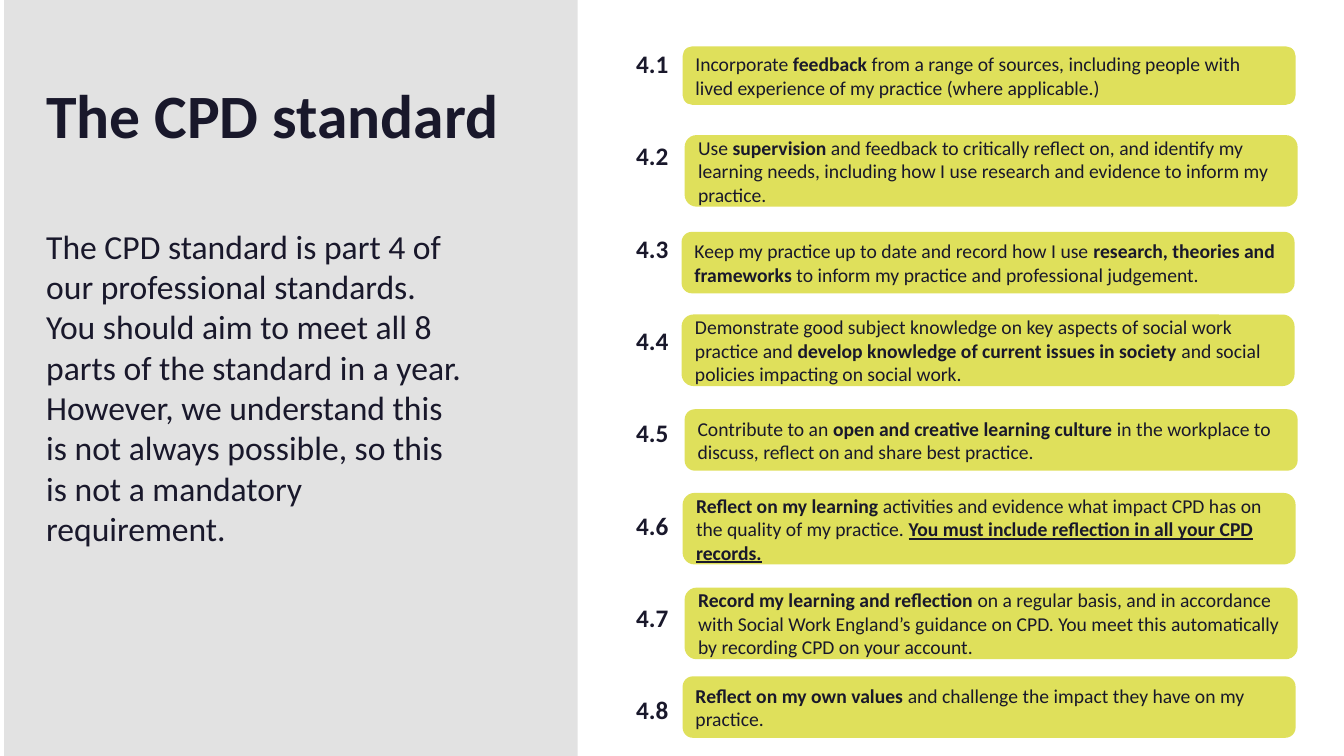
from dataclasses import dataclass

from pptx import Presentation
from pptx.dml.color import RGBColor as RGB
from pptx.enum.shapes import MSO_SHAPE as SHAPE
from pptx.enum.text import MSO_ANCHOR as ANCHOR, MSO_AUTO_SIZE as AUTO, PP_ALIGN as ALIGN
from pptx.util import Inches, Pt


@dataclass(frozen=True)
class Theme:
    font: str = "Calibri"
    ink: RGB = RGB(0x19, 0x18, 0x2B)
    panel: RGB = RGB(0xE2, 0xE2, 0xE2)
    lime: RGB = RGB(0xDF, 0xE0, 0x5B)
    white: RGB = RGB(0xFF, 0xFF, 0xFF)
    title: int = 44
    intro: int = 24
    number: int = 18
    body: int = 14


THEME = Theme()

TITLE = "The CPD standard"
INTRO = ("The CPD standard is part 4 of our professional standards. You should aim to meet "
         "all 8 parts of the standard in a year. However, we understand this is not always "
         "possible, so this is not a mandatory requirement.")

# Run styles
PLAIN, BOLD, UNDERLINED = range(3)

# Each standard: left, top, height of its box, then its runs
STANDARDS = [
    (6.77, 0.46, 0.58, [
        ("Incorporate ", PLAIN), ("feedback", BOLD),
        (" from a range of sources, including people with lived experience of my "
         "practice (where applicable.)", PLAIN)]),
    (6.79, 1.34, 0.71, [
        ("Use", PLAIN), (" supervision ", BOLD),
        ("and feedback to critically reflect on, and identify my learning needs, "
         "including how I use research and evidence to inform my practice.", PLAIN)]),
    (6.76, 2.30, 0.61, [
        ("Keep my practice up to date and record how I use ", PLAIN),
        ("research, theories and frameworks ", BOLD),
        ("to inform my practice and professional judgement.", PLAIN)]),
    (6.76, 3.12, 0.71, [
        ("Demonstrate good subject knowledge on key aspects of social work practice and ", PLAIN),
        ("develop knowledge of current issues in society ", BOLD),
        ("and social policies impacting on social work.", PLAIN)]),
    (6.79, 4.06, 0.61, [
        ("Contribute to an ", PLAIN), ("open and creative learning culture ", BOLD),
        ("in the workplace to discuss, reflect on and share best practice.", PLAIN)]),
    (6.77, 4.89, 0.71, [
        ("Reflect on my learning ", BOLD),
        ("activities and evidence what impact CPD has on the quality of my practice. ", PLAIN),
        ("You must include reflection in all your CPD records.", UNDERLINED)]),
    (6.79, 5.83, 0.71, [
        ("Record my learning and reflection ", BOLD),
        ("on a regular basis, and in accordance with Social Work England’s guidance on CPD. "
         "You meet this automatically by recording CPD on your account.", PLAIN)]),
    (6.77, 6.71, 0.61, [
        ("Reflect on my own values ", BOLD),
        ("and challenge the impact they have on my practice.", PLAIN)]),
]


def style(font, size, bold=False):
    font.name = THEME.font
    font.size = Pt(size)
    font.bold = bold
    font.color.rgb = THEME.ink


def add_box(s, kind, left, top, width, height, color):
    sp = s.shapes.add_shape(kind, Inches(left), Inches(top), Inches(width), Inches(height))
    sp.shadow.inherit = False
    sp.fill.solid()
    sp.fill.fore_color.rgb = color
    sp.line.fill.background()
    return sp


def add_text(s, left, top, width, height, text, size, bold=False):
    tb = s.shapes.add_textbox(Inches(left), Inches(top), Inches(width), Inches(height))
    tf = tb.text_frame
    tf.word_wrap = True
    tf.auto_size = AUTO.SHAPE_TO_FIT_TEXT
    tf.text = text
    style(tf.paragraphs[0].runs[0].font, size, bold)


def add_numbers(s, count):
    frame = s.shapes.add_table(1, 1, Inches(6.21), Inches(0.13), Inches(0.58), Inches(7.3))
    frame.table.first_row = frame.table.horz_banding = False
    cell = frame.table.cell(0, 0)
    cell.fill.solid()
    cell.fill.fore_color.rgb = THEME.white
    cell.margin_top = Inches(0.36)
    cell.text_frame.text = "\n".join(f"4.{i}" for i in range(1, count + 1))
    for i, p in enumerate(cell.text_frame.paragraphs):
        if i:
            p.space_before = Pt(44)
        style(p.runs[0].font, THEME.number, bold=True)


def add_standard(s, left, top, height, runs):
    sp = add_box(s, SHAPE.ROUNDED_RECTANGLE, left, top, 6.08, height, THEME.lime)
    tf = sp.text_frame
    tf.word_wrap = True
    tf.vertical_anchor = ANCHOR.MIDDLE
    p = tf.paragraphs[0]
    p.alignment = ALIGN.LEFT
    for text, look in runs:
        r = p.add_run()
        r.text = text
        style(r.font, THEME.body, bold=look != PLAIN)
        if look == UNDERLINED:
            r.font.underline = True


def main():
    prs = Presentation()
    prs.slide_width, prs.slide_height = Inches(13.33), Inches(7.5)
    s = prs.slides.add_slide(prs.slide_layouts[6])

    # Left panel with title and introduction
    add_box(s, SHAPE.RECTANGLE, 0.04, 0, 5.69, 7.5, THEME.panel)
    add_text(s, 0.36, 0.71, 5.37, 0.84, TITLE, THEME.title, bold=True)
    add_text(s, 0.36, 2.19, 4.36, 3.33, INTRO, THEME.intro)

    # Numbered standards
    add_numbers(s, len(STANDARDS))
    for standard in STANDARDS:
        add_standard(s, *standard)

    prs.save("out.pptx")


if __name__ == "__main__":
    main()
